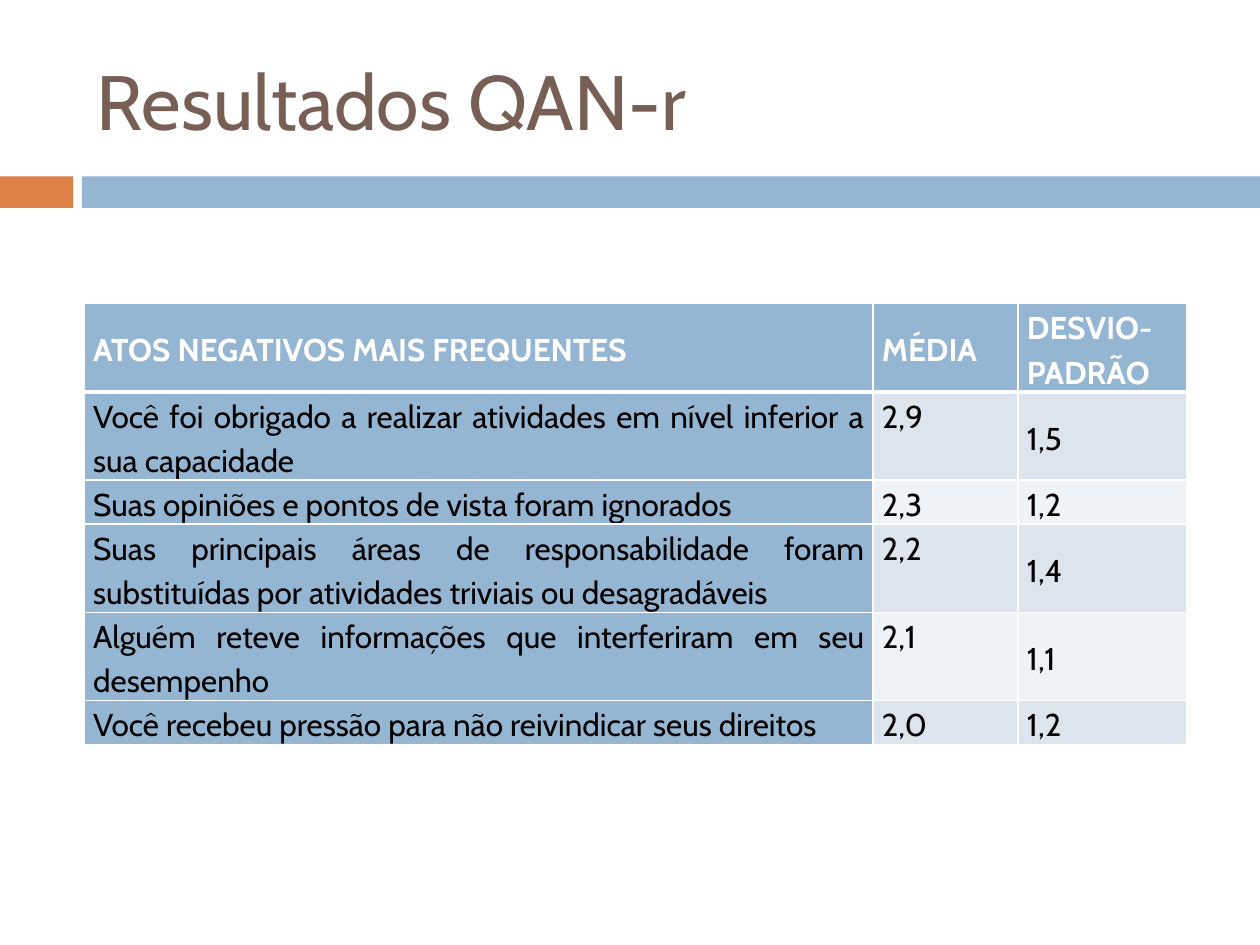
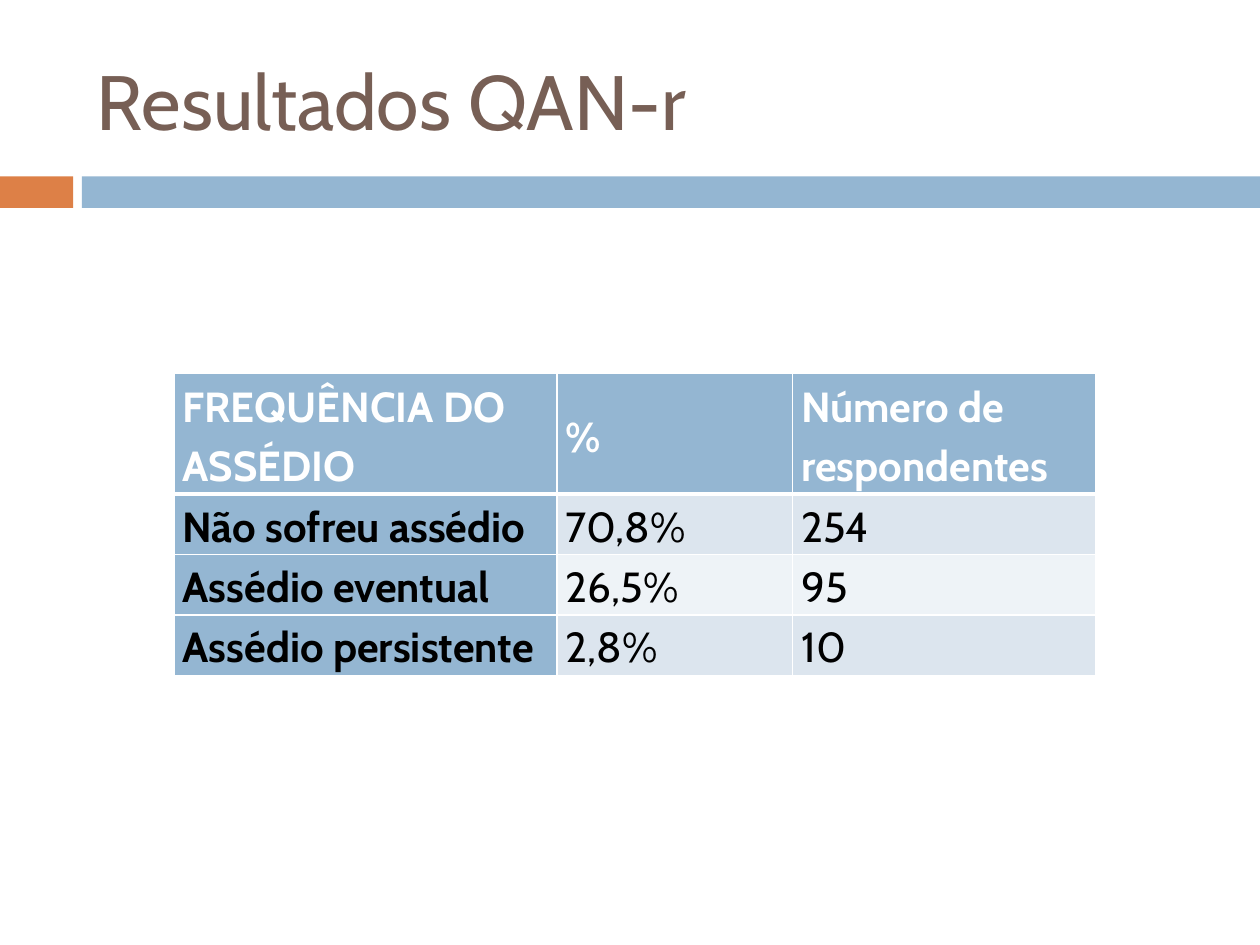
import dataclasses
import typing

import lxml.etree
import pptx
import pptx.dml.color
import pptx.enum.shapes
import pptx.enum.text
import pptx.oxml.ns
import pptx.util

ALIGN = pptx.enum.text.PP_ALIGN
ANCHOR = pptx.enum.text.MSO_ANCHOR
WIDE, HIGH = 100, 75  # columns and rows of the slide grid
UNIT = pptx.util.Inches(0.1)


@dataclasses.dataclass(frozen=True)
class Theme:
    font: str = "Cabin"
    title: str = "775F55"
    accent: str = "DD8047"
    main: str = "94B6D2"
    bands: tuple[str, str] = ("DCE5EE", "EEF3F7")
    light: str = "FFFFFF"
    dark: str = "000000"
    title_size: int = 44
    thin: int = 1
    thick: int = 3


class Box(typing.NamedTuple):
    left: float
    top: float
    width: float
    height: float


class Band(typing.NamedTuple):
    box: Box
    fill: str


class Row(typing.NamedTuple):
    lines: int
    texts: tuple[str, ...]


@dataclasses.dataclass(frozen=True)
class Grid:
    left: float
    top: float
    widths: tuple[float, ...]
    line: float  # height of one text line, in grid rows
    size: int
    rows: tuple[Row, ...]
    head_align: ALIGN
    bold_names: bool = False
    mid_cols: tuple[int, ...] = ()


THEME = Theme()
TITLE = "Resultados QAN-r"
TITLE_BOX = Box(6.7, 2.5, 89.2, 10.8)
BANDS = (
    Band(Box(0, 14, 5.8, 2.5), THEME.accent),
    Band(Box(6.5, 14, WIDE - 6.5, 2.5), THEME.main),
)

ACTS = Grid(
    left=6.7, top=24.1, widths=(62.6, 11.5, 13.4), line=3.5, size=18,
    head_align=ALIGN.JUSTIFY, mid_cols=(2,),
    rows=(
        Row(2, ("ATOS NEGATIVOS MAIS FREQUENTES", "MÉDIA", "DESVIO-PADRÃO")),
        Row(2, ("Você foi obrigado a realizar atividades em nível inferior a "
                "sua capacidade", "2,9", "1,5")),
        Row(1, ("Suas opiniões e pontos de vista foram ignorados", "2,3", "1,2")),
        Row(2, ("Suas principais áreas de responsabilidade foram substituídas "
                "por atividades triviais ou desagradáveis", "2,2", "1,4")),
        Row(2, ("Alguém reteve informações que interferiram em seu desempenho",
                "2,1", "1,1")),
        Row(1, ("Você recebeu pressão para não reivindicar seus direitos",
                "2,0", "1,2")),
    ),
)

RATES = Grid(
    left=13.8, top=29.6, widths=(30.4, 18.7, 24.1), line=4.8, size=24,
    head_align=ALIGN.LEFT, bold_names=True,
    rows=(
        Row(2, ("FREQUÊNCIA DO ASSÉDIO", "%", "Número de respondentes")),
        Row(1, ("Não sofreu assédio", "70,8%", "254")),
        Row(1, ("Assédio eventual", "26,5%", "95")),
        Row(1, ("Assédio persistente", "2,8%", "10")),
    ),
)


def span(units: float) -> int:
    """Turn grid units into a length."""
    return round(units * UNIT)


def place(box: Box) -> tuple[int, ...]:
    return tuple(span(side) for side in box)


def tint(code: str) -> pptx.dml.color.RGBColor:
    return pptx.dml.color.RGBColor.from_string(code)


def put(target: typing.Any, values: dict[str, typing.Any]) -> None:
    for name, value in values.items():
        setattr(target, name, value)


def write(frame: typing.Any, text: str, size: int, shade: str, bold: bool,
          style: dict[str, typing.Any]) -> None:
    """Fill a text frame with one paragraph in the theme font."""
    para = frame.paragraphs[0]
    put(para, style)
    run = para.add_run()
    run.text = text
    put(run.font, {"name": THEME.font, "size": pptx.util.Pt(size), "bold": bold})
    run.font.color.rgb = tint(shade)


def edge(cell: typing.Any, sides: dict[str, int]) -> None:
    """Draw cell borders; sides maps L, R, T and B to widths in points."""
    props = cell._tc.get_or_add_tcPr()
    for side, width in sides.items():
        line = lxml.etree.SubElement(
            props, pptx.oxml.ns.qn(f"a:ln{side}"), w=str(pptx.util.Pt(width)))
        fill = lxml.etree.SubElement(line, pptx.oxml.ns.qn("a:solidFill"))
        lxml.etree.SubElement(
            fill, pptx.oxml.ns.qn("a:srgbClr"), val=THEME.light)


def draw_cell(cell: typing.Any, grid: Grid, r: int, c: int) -> None:
    head, name = r == 0, c == 0
    put(cell, {
        "margin_left": span(0.7), "margin_right": span(0.7),
        "margin_top": 0, "margin_bottom": 0,
        "vertical_anchor":
            ANCHOR.MIDDLE if head or c in grid.mid_cols else ANCHOR.TOP,
    })
    sides = {"L": THEME.thin, "R": THEME.thin}
    if head:
        sides["T"] = THEME.thin
    edge(cell, sides | {"B": THEME.thick if head else THEME.thin})
    cell.fill.solid()
    cell.fill.fore_color.rgb = tint(
        THEME.main if head or name else THEME.bands[(r - 1) % 2])
    write(cell.text_frame, grid.rows[r].texts[c], grid.size,
          THEME.light if head else THEME.dark,
          head or (name and grid.bold_names),
          {"alignment": grid.head_align if head else ALIGN.JUSTIFY,
           "line_spacing": 1.15})


def draw_grid(slide: typing.Any, grid: Grid) -> None:
    heights = [row.lines * grid.line for row in grid.rows]
    box = Box(grid.left, grid.top, sum(grid.widths), sum(heights))
    table = slide.shapes.add_table(
        len(heights), len(grid.widths), *place(box)).table
    for col, width in zip(table.columns, grid.widths):
        col.width = span(width)
    for r, height in enumerate(heights):
        table.rows[r].height = span(height)
        for c in range(len(grid.widths)):
            draw_cell(table.cell(r, c), grid, r, c)


def draw_band(slide: typing.Any, band: Band) -> None:
    shape = slide.shapes.add_shape(
        pptx.enum.shapes.MSO_SHAPE.RECTANGLE, *place(band.box))
    shape.shadow.inherit = False
    shape.fill.solid()
    shape.fill.fore_color.rgb = tint(band.fill)
    shape.line.fill.background()


def draw_title(slide: typing.Any) -> None:
    frame = slide.shapes.add_textbox(*place(TITLE_BOX)).text_frame
    put(frame, {"word_wrap": True, "vertical_anchor": ANCHOR.MIDDLE})
    write(frame, TITLE, THEME.title_size, THEME.title, False, {})


def main() -> None:
    deck = pptx.Presentation()
    put(deck, {"slide_width": span(WIDE), "slide_height": span(HIGH)})
    for grid in (ACTS, RATES):
        slide = deck.slides.add_slide(deck.slide_layouts[6])
        for band in BANDS:
            draw_band(slide, band)
        draw_title(slide)
        draw_grid(slide, grid)
    deck.save("out.pptx")


if __name__ == "__main__":
    main()
